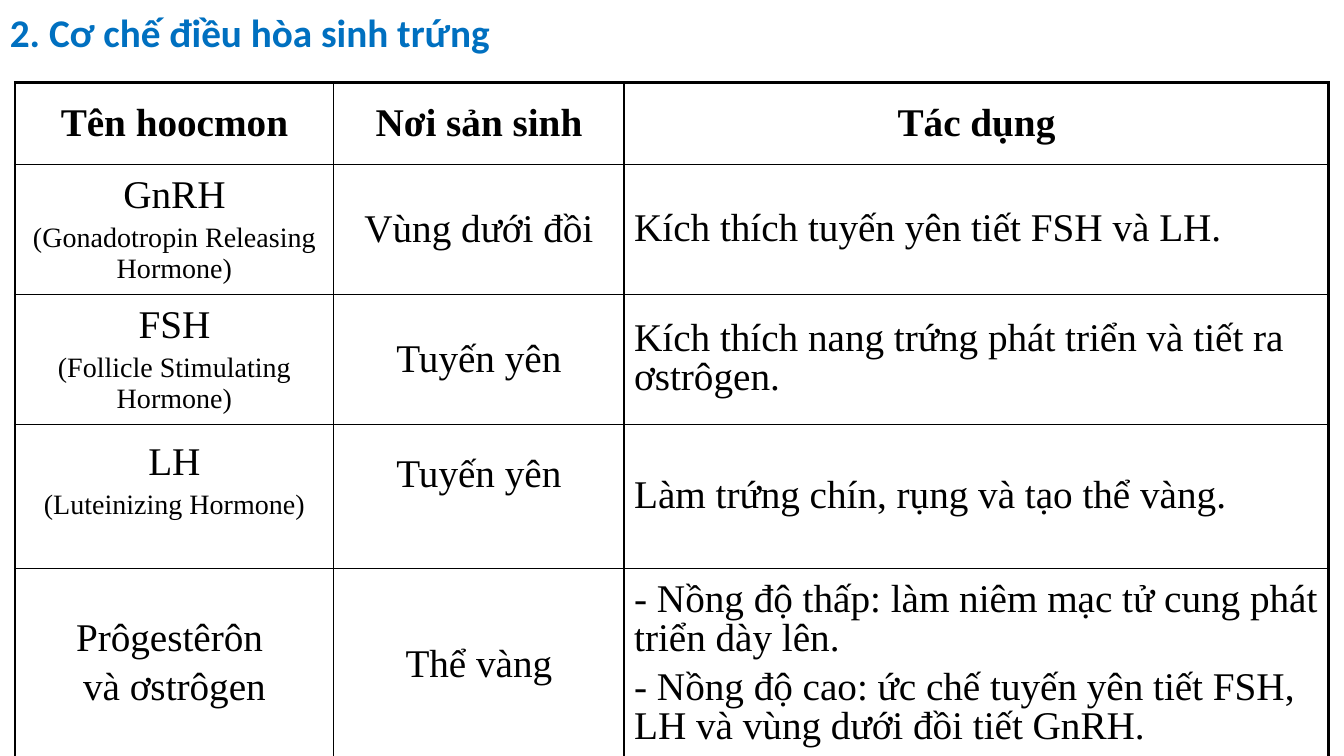
from dataclasses import dataclass

from lxml.etree import SubElement
from pptx import Presentation
from pptx.dml.color import RGBColor
from pptx.enum.text import MSO_ANCHOR, MSO_AUTO_SIZE, PP_ALIGN
from pptx.oxml.ns import qn
from pptx.util import Inches, Pt

BLACK = RGBColor(0x00, 0x00, 0x00)
WHITE = RGBColor(0xFF, 0xFF, 0xFF)
BLUE = RGBColor(0x00, 0x70, 0xC0)
SERIF = "Times New Roman"
WIDE, HIGH = Inches(13.33), Inches(7.5)
COLS = (3.16, 2.88, 6.99)
ROWS = (0.81, 1.29, 1.29, 1.43, 1.9)
THICK, THIN = 2.25, 1
PAD = 0.09


@dataclass
class Entry:
    text: str
    sizes: tuple = (28,)
    bold: bool = False
    tight: bool = False
    left: bool = False
    foot: float = PAD


def head(text: str) -> Entry:
    return Entry(text, bold=True)


def name(text: str, foot: float = PAD) -> Entry:
    return Entry(text, sizes=(28, 20), foot=foot)


def effect(text: str) -> Entry:
    return Entry(text, tight=True, left=True)


GRID = (
    (head("Tên hoocmon"), head("Nơi sản sinh"), head("Tác dụng")),
    (name("GnRH\n(Gonadotropin Releasing Hormone)"), Entry("Vùng dưới đồi"),
     effect("Kích thích tuyến yên tiết FSH và LH.")),
    (name("FSH\n(Follicle Stimulating Hormone)"), Entry("Tuyến yên"),
     effect("Kích thích nang trứng phát triển và tiết ra ơstrôgen.")),
    (name("LH\n(Luteinizing Hormone)", foot=0.41), Entry("Tuyến yên", foot=0.53),
     effect("Làm trứng chín, rụng và tạo thể vàng.")),
    (Entry("Prôgestêrôn \nvà ơstrôgen", tight=True), Entry("Thể vàng"),
     effect("- Nồng độ thấp: làm niêm mạc tử cung phát triển dày lên.\n"
            "- Nồng độ cao: ức chế tuyến yên tiết FSH, LH và vùng dưới đồi tiết GnRH.")),
)


def style(para, face: str, size: float, color: RGBColor, bold: bool) -> None:
    for run in para.runs:
        font = run.font
        font.name, font.size, font.bold = face, Pt(size), bold
        font.color.rgb = color


def space(para, tight: bool) -> None:
    if tight:
        para.line_spacing, para.space_before = 0.9, Pt(7.5)
    else:
        gap = SubElement(para._p.get_or_add_pPr(), qn("a:spcBef"))
        SubElement(gap, qn("a:spcPct"), val="20000")


def border(cell, row: int, col: int) -> None:
    outer = {"L": col == 0, "R": col == len(COLS) - 1,
             "T": row == 0, "B": row == len(ROWS) - 1}
    props = cell._tc.get_or_add_tcPr()
    for side, edge in outer.items():
        width = Pt(THICK if edge else THIN)
        line = SubElement(props, qn(f"a:ln{side}"), w=str(int(width)))
        fill = SubElement(line, qn("a:solidFill"))
        SubElement(fill, qn("a:srgbClr"), val=str(BLACK))


def write(cell, entry: Entry) -> None:
    cell.vertical_anchor = MSO_ANCHOR.MIDDLE
    cell.margin_top, cell.margin_bottom = Inches(PAD), Inches(entry.foot)
    cell.text_frame.text = entry.text
    for i, para in enumerate(cell.text_frame.paragraphs):
        para.alignment = PP_ALIGN.LEFT if entry.left else PP_ALIGN.CENTER
        space(para, entry.tight)
        style(para, SERIF, entry.sizes[min(i, len(entry.sizes) - 1)], BLACK, entry.bold)


def main() -> None:
    deck = Presentation()
    deck.slide_width, deck.slide_height = WIDE, HIGH
    slide = deck.slides.add_slide(deck.slide_layouts[6])

    # Hormone table
    frame = slide.shapes.add_table(len(ROWS), len(COLS), Inches(0.15), Inches(0.82),
                                   Inches(sum(COLS)), Inches(sum(ROWS)))
    table = frame.table
    table.first_row = table.horz_banding = False
    for col, width in zip(table.columns, COLS):
        col.width = Inches(width)
    for row, height in zip(table.rows, ROWS):
        row.height = Inches(height)
    for r, line in enumerate(GRID):
        for c, entry in enumerate(line):
            cell = table.cell(r, c)
            write(cell, entry)
            border(cell, r, c)
            cell.fill.solid()
            cell.fill.fore_color.rgb = WHITE

    # Title
    box = slide.shapes.add_textbox(0, Inches(0.03), Inches(5.4), Inches(0.57))
    text = box.text_frame
    text.word_wrap = True
    text.auto_size = MSO_AUTO_SIZE.SHAPE_TO_FIT_TEXT
    text.text = "2. Cơ chế điều hòa sinh trứng"
    style(text.paragraphs[0], "Calibri", 28, BLUE, True)

    deck.save("out.pptx")


if __name__ == "__main__":
    main()
